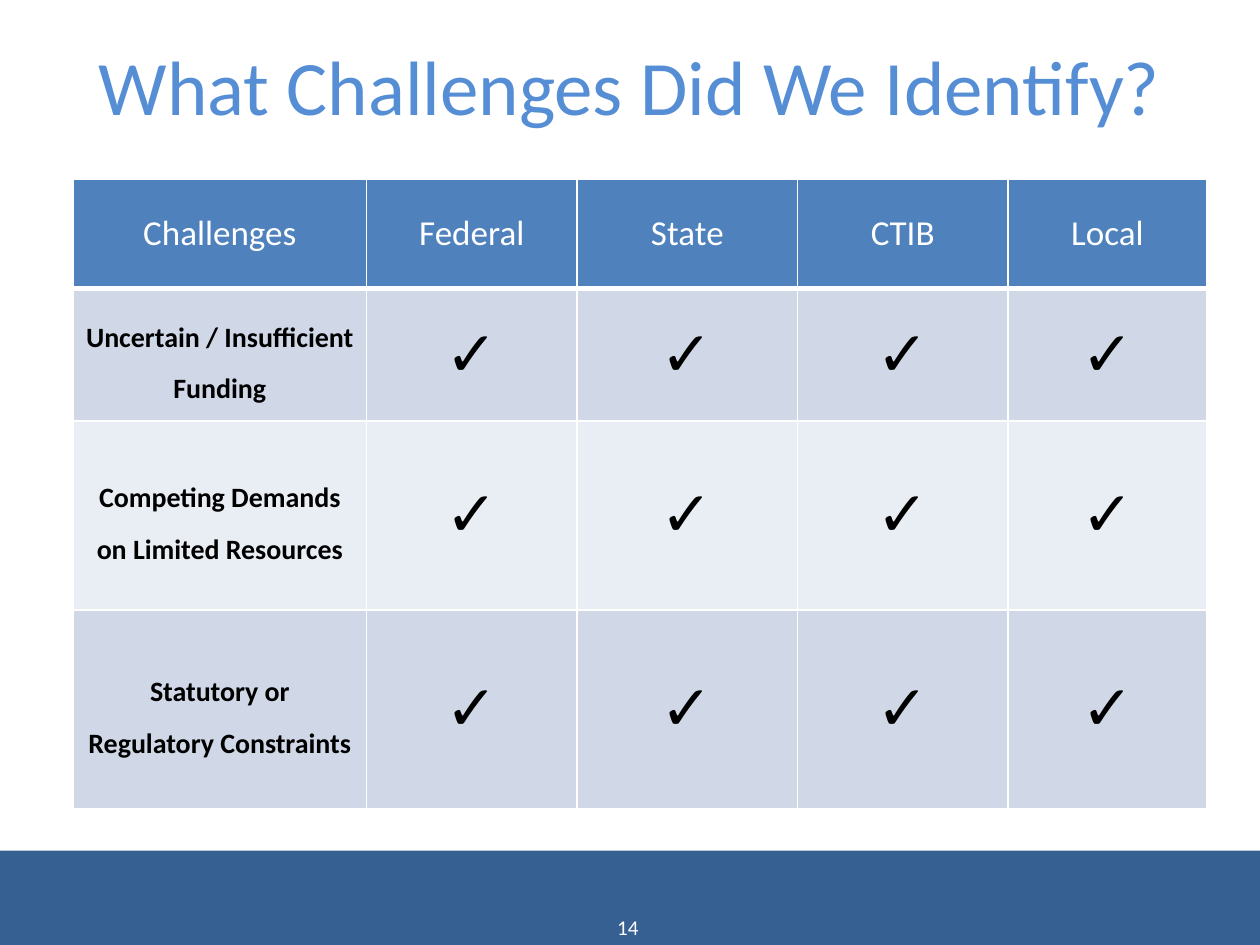
"""Build a slide with a table of challenges by level of government."""
from dataclasses import dataclass

from lxml import etree
from pptx import Presentation
from pptx.dml.color import RGBColor
from pptx.enum.shapes import MSO_SHAPE
from pptx.enum.text import MSO_ANCHOR, PP_ALIGN
from pptx.oxml.ns import qn
from pptx.util import Inches, Pt

RECT = MSO_SHAPE.RECTANGLE
MIDDLE, TOP = MSO_ANCHOR.MIDDLE, MSO_ANCHOR.TOP
CENTER, LEFT = PP_ALIGN.CENTER, PP_ALIGN.LEFT

TITLE = "What Challenges Did We Identify?"
PAGE = "14"
HEADS = ["Challenges", "Federal", "State", "CTIB", "Local"]
TOPICS = [
    "Uncertain / Insufficient Funding",
    "Competing Demands on Limited Resources",
    "Statutory or Regulatory Constraints",
]
MARK = "✓"
WIDTHS = [2.33, 1.67, 1.75, 1.67, 1.58]
HEIGHTS = [0.87, 1.05, 1.5, 1.58]


@dataclass(frozen=True)
class Theme:
    font: str = "Calibri"
    white: str = "FFFFFF"
    black: str = "000000"
    title: str = "558ED5"
    footer: str = "376092"
    head: str = "4F81BD"
    bands: tuple = ("D0D8E8", "E9EDF4")
    title_size: int = 44
    head_size: int = 20
    topic_size: int = 16
    mark_size: int = 36
    page_size: int = 12


THEME = Theme()


def paint(fill, color):
    fill.solid()
    fill.fore_color.rgb = RGBColor.from_string(color)


def write(frame, text, size, color, bold=False, align=CENTER):
    frame.text = text
    para = frame.paragraphs[0]
    para.alignment = align
    para.font.name = THEME.font
    para.font.size = Pt(size)
    para.font.bold = bold
    para.font.color.rgb = RGBColor.from_string(color)
    return para


def add_text(slide, box, text, size, color, align, anchor, wrap):
    frame = slide.shapes.add_textbox(*map(Inches, box)).text_frame
    frame.word_wrap = wrap
    frame.vertical_anchor = anchor
    write(frame, text, size, color, align=align)


def add_edges(cell, base):
    props = cell._tc.get_or_add_tcPr()
    for side, width in zip("LRTB", (1, 1, 1, base)):
        line = etree.SubElement(props, qn(f"a:ln{side}"), w=str(Pt(width)))
        fill = etree.SubElement(line, qn("a:solidFill"))
        etree.SubElement(fill, qn("a:srgbClr"), val=THEME.white)


def fill_cell(cell, text, row, col):
    cell.vertical_anchor = MIDDLE
    add_edges(cell, 1 if row else 3)
    paint(cell.fill, THEME.bands[(row - 1) % 2] if row else THEME.head)
    if row == 0:
        write(cell.text_frame, text, THEME.head_size, THEME.white)
    elif col == 0:
        para = write(cell.text_frame, text, THEME.topic_size, THEME.black, True)
        para.line_spacing = 1.5
    else:
        write(cell.text_frame, text, THEME.mark_size, THEME.black)


def add_grid(slide):
    rows = [HEADS] + [[topic] + [MARK] * (len(HEADS) - 1) for topic in TOPICS]
    box = map(Inches, (0.58, 1.42, sum(WIDTHS), sum(HEIGHTS)))
    table = slide.shapes.add_table(len(rows), len(HEADS), *box).table
    for column, width in zip(table.columns, WIDTHS):
        column.width = Inches(width)
    for line, height in zip(table.rows, HEIGHTS):
        line.height = Inches(height)
    for row, texts in enumerate(rows):
        for col, text in enumerate(texts):
            fill_cell(table.cell(row, col), text, row, col)


def main():
    deck = Presentation()
    deck.slide_width, deck.slide_height = Inches(10), Inches(7.5)
    slide = deck.slides.add_slide(deck.slide_layouts[6])
    footer = slide.shapes.add_shape(RECT, *map(Inches, (0, 6.75, 10, 0.75)))
    footer.shadow.inherit = False
    paint(footer.fill, THEME.footer)
    footer.line.fill.background()
    add_text(slide, (4.8, 7.21, 0.4, 0.3), PAGE, THEME.page_size,
             THEME.white, LEFT, TOP, False)
    add_text(slide, (0.5, 0.17, 9, 1), TITLE, THEME.title_size,
             THEME.title, CENTER, MIDDLE, True)
    add_grid(slide)
    deck.save("out.pptx")


if __name__ == "__main__":
    main()
